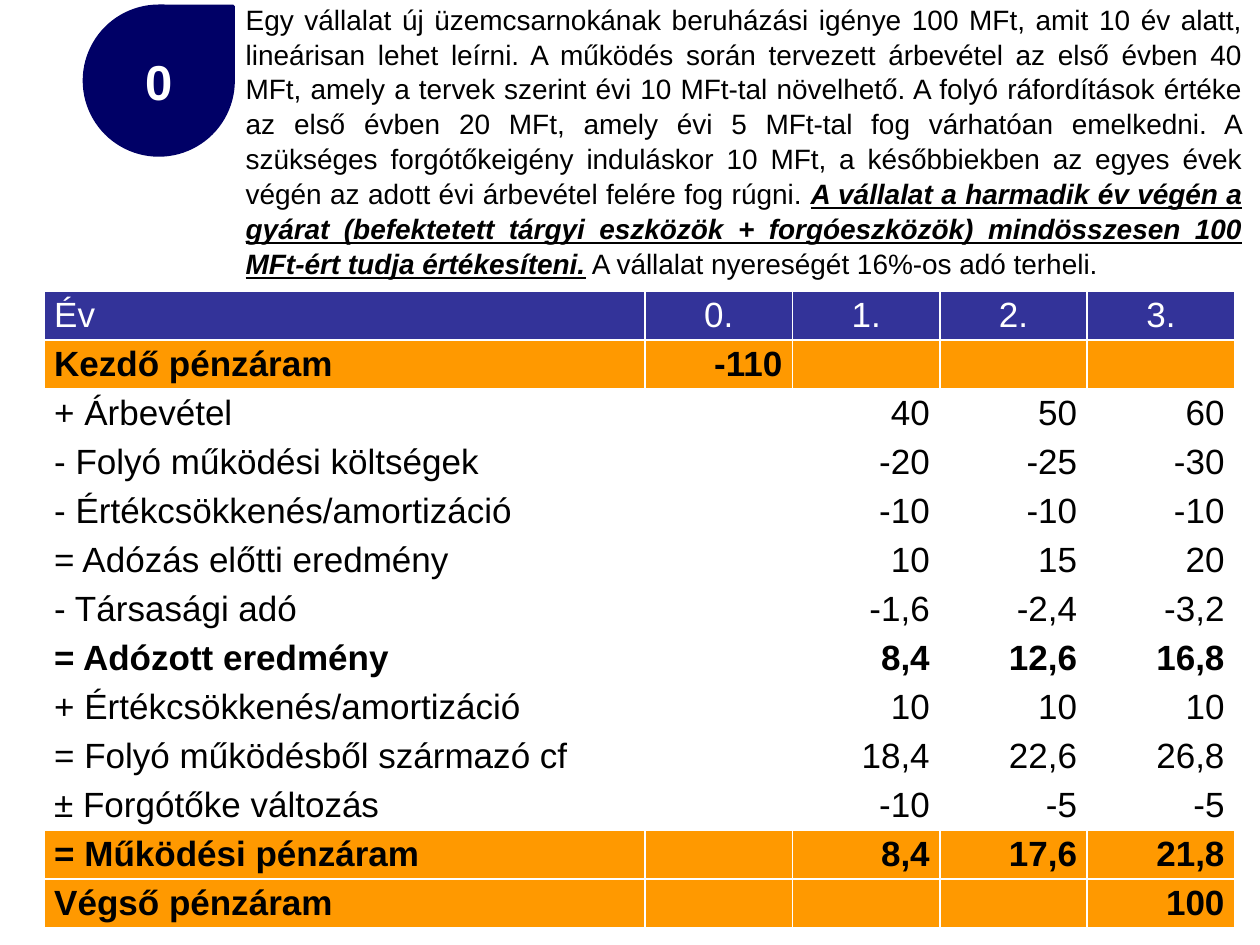
"""Build a one-slide cash flow exercise with its solution table."""
from lxml.etree import SubElement
from pptx import Presentation
from pptx.dml.color import RGBColor
from pptx.enum.shapes import MSO_SHAPE as Shape
from pptx.enum.text import MSO_ANCHOR as Anchor, PP_ALIGN as Align
from pptx.oxml.ns import qn
from pptx.util import Inches, Pt

BLACK = RGBColor(0x00, 0x00, 0x00)
WHITE = RGBColor(0xFF, 0xFF, 0xFF)
NAVY = RGBColor(0x00, 0x00, 0x66)
INDIGO = RGBColor(0x33, 0x33, 0x99)
ORANGE = RGBColor(0xFF, 0x99, 0x00)

EXERCISE = [
    ("Egy vállalat új üzemcsarnokának beruházási igénye 100 MFt, amit 10 év alatt, "
     "lineárisan lehet leírni. A működés során tervezett árbevétel az első évben 40 MFt, "
     "amely a tervek szerint évi 10 MFt-tal növelhető. A folyó ráfordítások értéke az első "
     "évben 20 MFt, amely évi 5 MFt-tal fog várhatóan emelkedni. A szükséges "
     "forgótőkeigény induláskor 10 MFt, a későbbiekben az egyes évek végén az adott évi "
     "árbevétel felére fog rúgni. ", False),
    ("A vállalat a harmadik év végén a gyárat (befektetett tárgyi eszközök + "
     "forgóeszközök) mindösszesen 100 MFt-ért tudja értékesíteni.", True),
    (" A vállalat nyereségét 16%-os adó terheli.", False),
]
BADGE = "0"
CASH_FLOW = [
    ("Év", "0.", "1.", "2.", "3."),
    ("Kezdő pénzáram", "-110", "", "", ""),
    ("+ Árbevétel", "", "40", "50", "60"),
    ("- Folyó működési költségek", "", "-20", "-25", "-30"),
    ("- Értékcsökkenés/amortizáció", "", "-10", "-10", "-10"),
    ("= Adózás előtti eredmény", "", "10", "15", "20"),
    ("- Társasági adó", "", "-1,6", "-2,4", "-3,2"),
    ("= Adózott eredmény", "", "8,4", "12,6", "16,8"),
    ("+ Értékcsökkenés/amortizáció", "", "10", "10", "10"),
    ("= Folyó működésből származó cf", "", "18,4", "22,6", "26,8"),
    ("± Forgótőke változás", "", "-10", "-5", "-5"),
    ("= Működési pénzáram", "", "8,4", "17,6", "21,8"),
    ("Végső pénzáram", "", "", "", "100"),
]
HIGHLIGHTED = {"Kezdő pénzáram", "= Működési pénzáram", "Végső pénzáram"}
BOLD = HIGHLIGHTED | {"= Adózott eredmény"}
LABEL_WIDTH, YEAR_WIDTH, TABLE_HEIGHT = 4.77, 1.17, 5.06


def add_span(para, text, size, color, bold=False):
    span = para.add_run()
    span.text = text
    span.font.name = "Arial"
    span.font.size = Pt(size)
    span.font.bold = bold
    span.font.color.rgb = color
    return span


def add_exercise(page):
    title = page.shapes.title
    title.left, title.top = Inches(1.85), Inches(0.05)
    title.width, title.height = Inches(8.11), Inches(2.13)
    title.text_frame.word_wrap = True
    title.text_frame.vertical_anchor = Anchor.MIDDLE
    para = title.text_frame.paragraphs[0]
    para.alignment = Align.JUSTIFY
    para.line_spacing = 1.04
    for text, stressed in EXERCISE:
        span = add_span(para, text, 16, BLACK, stressed)
        span.font.italic = span.font.underline = stressed


def add_badge(page):
    badge = page.shapes.add_shape(
        Shape.TEAR, Inches(0.67), Inches(0.05), Inches(1.18), Inches(1.18))
    badge.shadow.inherit = False
    badge.fill.solid()
    badge.fill.fore_color.rgb = badge.line.color.rgb = NAVY
    badge.line.width = Pt(2)
    badge.text_frame.vertical_anchor = Anchor.MIDDLE
    para = badge.text_frame.paragraphs[0]
    para.alignment = Align.CENTER
    add_span(para, BADGE, 28, WHITE, True)


def style_cell(cell, color):
    cell.margin_left = cell.margin_right = Inches(0.08)
    cell.margin_top = cell.margin_bottom = 0
    cell.vertical_anchor = Anchor.MIDDLE
    properties = cell._tc.get_or_add_tcPr()
    for side in ("lnL", "lnR", "lnT", "lnB"):
        border = SubElement(properties, qn(f"a:{side}"), w=str(Pt(1)))
        fill = SubElement(border, qn("a:solidFill"))
        SubElement(fill, qn("a:srgbClr"), val=str(WHITE))
    cell.fill.solid()
    cell.fill.fore_color.rgb = color


def add_cash_flow(page):
    rows, years = len(CASH_FLOW), len(CASH_FLOW[0]) - 1
    table = page.shapes.add_table(
        rows, years + 1, Inches(0.35), Inches(2.31),
        Inches(LABEL_WIDTH + years * YEAR_WIDTH), Inches(TABLE_HEIGHT)).table
    table.horz_banding = False
    for index, column in enumerate(table.columns):
        column.width = Inches(YEAR_WIDTH if index else LABEL_WIDTH)
    for row_index, values in enumerate(CASH_FLOW):
        table.rows[row_index].height = Inches(TABLE_HEIGHT / rows)
        label, header = values[0], row_index == 0
        color = INDIGO if header else ORANGE if label in HIGHLIGHTED else WHITE
        for column_index, value in enumerate(values):
            cell = table.cell(row_index, column_index)
            style_cell(cell, color)
            para = cell.text_frame.paragraphs[0]
            if column_index:
                para.alignment = Align.CENTER if header else Align.RIGHT
            if value:
                add_span(para, value, 20, WHITE if header else BLACK, label in BOLD)


def main():
    deck = Presentation()
    deck.slide_width, deck.slide_height = Inches(10), Inches(7.5)
    page = deck.slides.add_slide(deck.slide_layouts[5])
    add_exercise(page)
    add_badge(page)
    add_cash_flow(page)
    deck.save("out.pptx")


if __name__ == "__main__":
    main()
